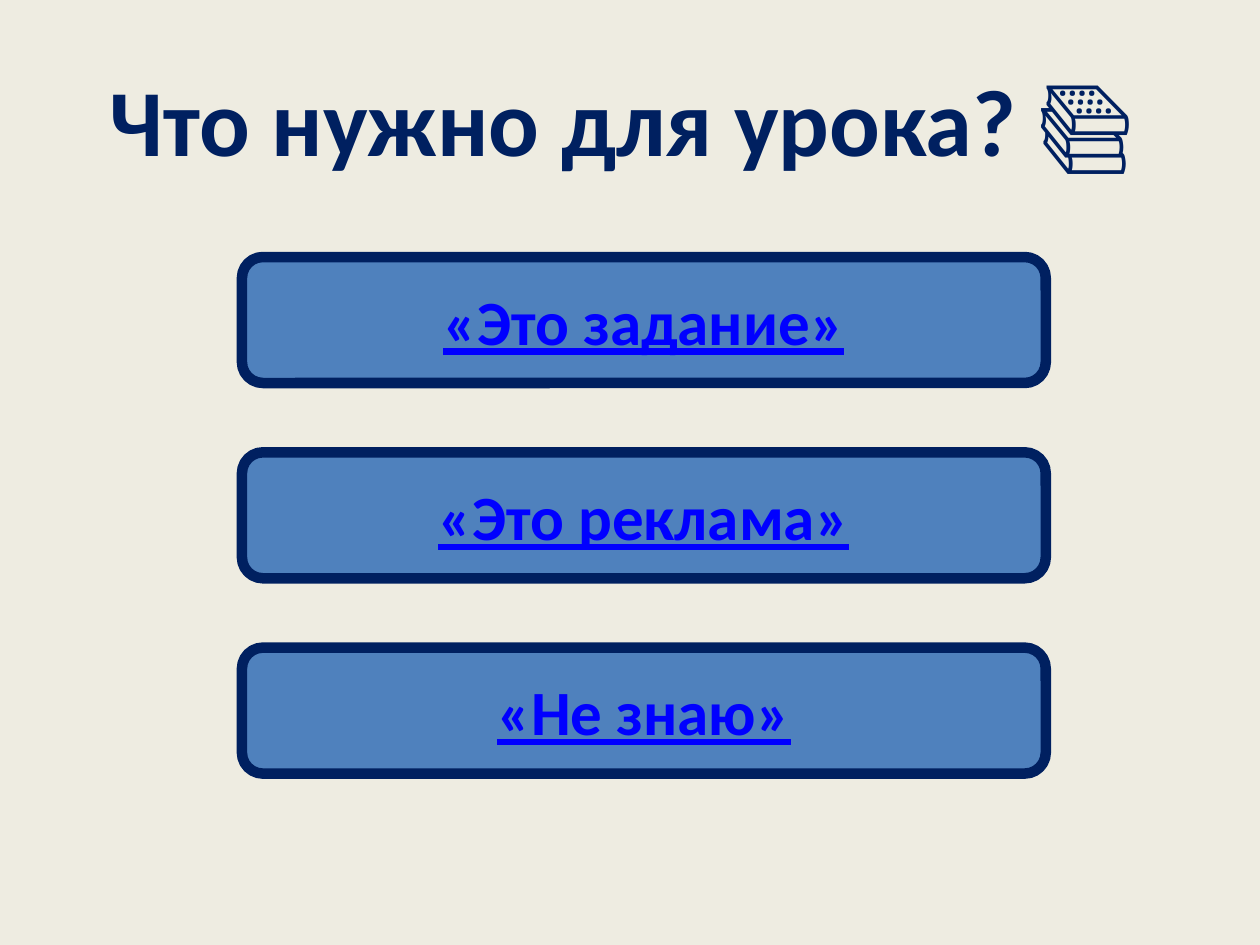
"""Build a lesson slide with a question and three answer buttons."""
from pptx import Presentation
from pptx.dml.color import RGBColor
from pptx.enum.shapes import MSO_SHAPE
from pptx.enum.text import MSO_ANCHOR, MSO_AUTO_SIZE, PP_ALIGN
from pptx.util import Inches, Pt

QUESTION = "Что нужно для урока? 📚"
ANSWERS = ["«Это задание»", "«Это реклама»", "«Не знаю»"]

CREAM = RGBColor(0xEE, 0xEC, 0xE1)
NAVY = RGBColor(0x00, 0x20, 0x60)
STEEL = RGBColor(0x4F, 0x81, 0xBD)
BLUE = RGBColor(0x00, 0x00, 0xFF)

SLIDE_WIDTH, SLIDE_HEIGHT = Inches(10), Inches(7.5)
ANSWER_LEFT, ANSWER_TOP = Inches(1.92), Inches(2.04)
ANSWER_WIDTH, ANSWER_HEIGHT = Inches(6.38), Inches(1)
ANSWER_PITCH = Inches(1.55)


def write(frame, wording, size, color, anchor, underline=False):
    frame.word_wrap = True
    frame.auto_size = MSO_AUTO_SIZE.NONE
    frame.vertical_anchor = anchor
    paragraph = frame.paragraphs[0]
    paragraph.alignment = PP_ALIGN.CENTER
    run = paragraph.add_run()
    run.text = wording
    run.font.name = "Calibri"
    run.font.size = Pt(size)
    run.font.bold = True
    run.font.underline = underline
    run.font.color.rgb = color


def add_answer(slide, row, wording):
    answer = slide.shapes.add_shape(
        MSO_SHAPE.ROUNDED_RECTANGLE, ANSWER_LEFT, ANSWER_TOP + row * ANSWER_PITCH,
        ANSWER_WIDTH, ANSWER_HEIGHT)
    answer.shadow.inherit = False
    answer.fill.solid()
    answer.fill.fore_color.rgb = STEEL
    answer.line.color.rgb = NAVY
    answer.line.width = Pt(6)
    write(answer.text_frame, wording, 36, BLUE, MSO_ANCHOR.MIDDLE, underline=True)


def main():
    deck = Presentation()
    deck.slide_width, deck.slide_height = SLIDE_WIDTH, SLIDE_HEIGHT
    slide = deck.slides.add_slide(deck.slide_layouts[5])
    slide.background.fill.solid()
    slide.background.fill.fore_color.rgb = CREAM

    question = slide.shapes.title
    question.left, question.top = Inches(0.43), Inches(0.44)
    question.width, question.height = Inches(9), Inches(1.25)
    write(question.text_frame, QUESTION, 54, NAVY, MSO_ANCHOR.TOP)

    for row, wording in enumerate(ANSWERS):
        add_answer(slide, row, wording)
    deck.save("out.pptx")


if __name__ == "__main__":
    main()
